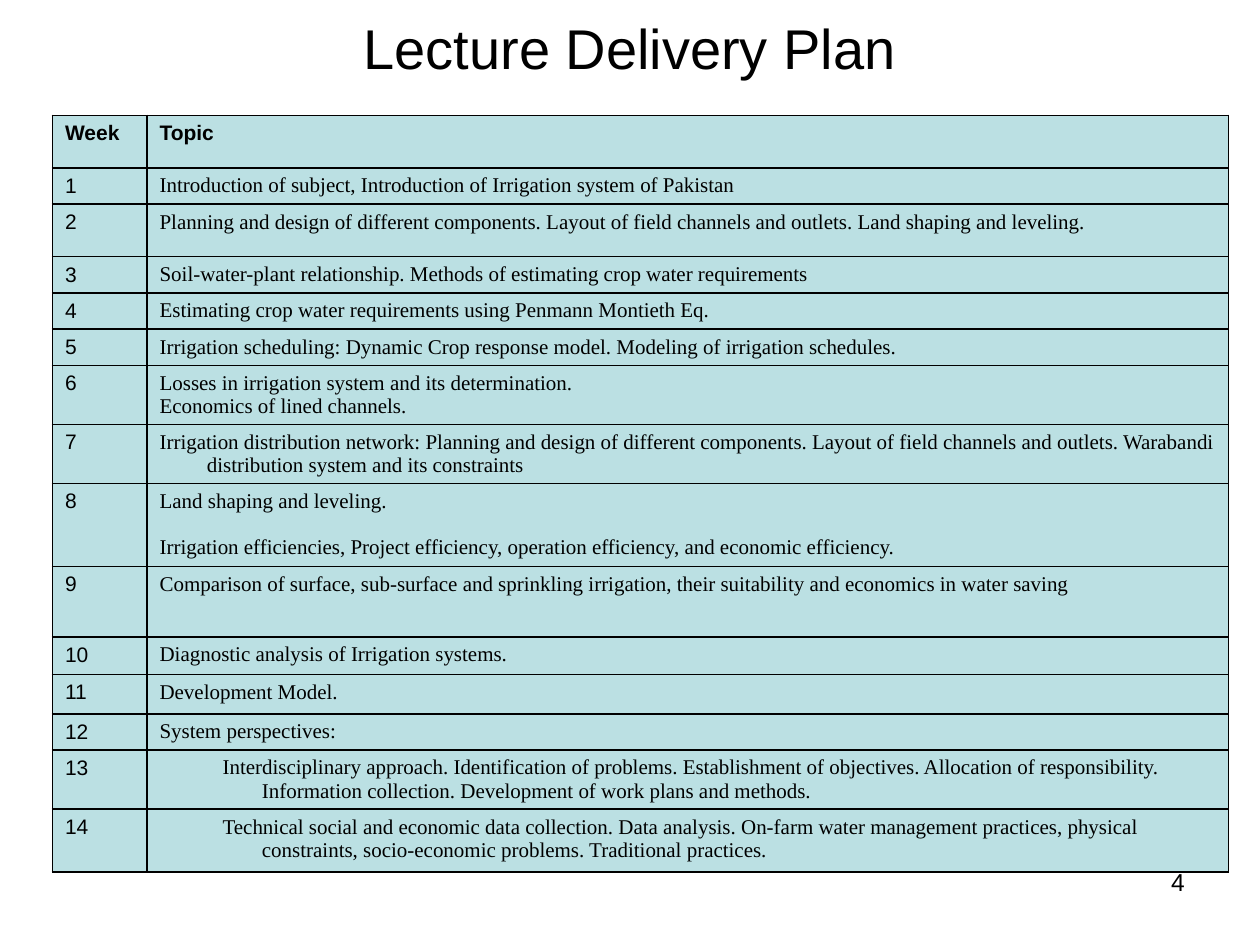
from lxml import etree
from pptx import Presentation
from pptx.dml.color import RGBColor
from pptx.enum import text
from pptx.oxml import ns
from pptx.util import Pt

BLACK = RGBColor(0, 0, 0)
TEAL = RGBColor(0xBB, 0xE0, 0xE3)
SANS, SERIF = "Arial", "Times New Roman"

# Row height and topic paragraphs, one entry a week
WEEKS = [
    (20.7, ["Introduction of subject, Introduction of Irrigation system of Pakistan"]),
    (30, ["Planning and design of different components. Layout of field channels "
          "and outlets. Land shaping and leveling."]),
    (20.7, ["Soil-water-plant relationship. Methods of estimating crop water requirements"]),
    (20.7, ["Estimating crop water requirements using Penmann Montieth Eq."]),
    (20.7, ["Irrigation scheduling: Dynamic Crop response model. "
            "Modeling of irrigation schedules."]),
    (33.8, ["Losses in irrigation system and its determination.",
            "Economics of lined channels."]),
    (33.8, ["Irrigation distribution network: Planning and design of different "
            "components. Layout of field channels and outlets. Warabandi "
            "distribution system and its constraints"]),
    (47.4, ["Land shaping and leveling.",
            "Irrigation efficiencies, Project efficiency, operation efficiency, "
            "and economic efficiency."]),
    (40.3, ["Comparison of surface, sub-surface and sprinkling irrigation, their "
            "suitability and economics in water saving"]),
    (21.5, ["Diagnostic analysis of Irrigation systems."]),
    (22.4, ["Development Model."]),
    (20.7, ["System perspectives:"]),
    (33.8, ["Interdisciplinary approach. Identification of problems. Establishment "
            "of objectives. Allocation of responsibility. Information collection. "
            "Development of work plans and methods."]),
    (36, ["Technical social and economic data collection. Data analysis. On-farm "
          "water management practices, physical constraints, socio-economic "
          "problems. Traditional practices."]),
]
GAPS = {8: 13.2}      # space between the paragraphs of a week
NESTED = (13, 14)     # weeks set one level deeper


def style(para, size, font, bold=False):
    for run in para.runs:
        run.font.size = Pt(size)
        run.font.name = font
        run.font.bold = bold
        run.font.color.rgb = BLACK


def indent(para, left, first):
    props = para._p.get_or_add_pPr()
    props.set("marL", str(Pt(left)))
    props.set("indent", str(Pt(first)))


def label(slide, words, box, size, align, anchor):
    frame = slide.shapes.add_textbox(*map(Pt, box)).text_frame
    frame.word_wrap = True
    frame.vertical_anchor = anchor
    frame.text = words
    para = frame.paragraphs[0]
    para.alignment = align
    style(para, size, SANS)


def border(cell):
    props = cell._tc.get_or_add_tcPr()
    for side in ("lnL", "lnR", "lnT", "lnB"):
        line = etree.SubElement(props, ns.qn(f"a:{side}"), w=str(Pt(1)))
        fill = etree.SubElement(line, ns.qn("a:solidFill"))
        etree.SubElement(fill, ns.qn("a:srgbClr"), val=str(BLACK))


def write(cell, words, font, bold=False):
    """Fill one table cell and return its paragraphs."""
    border(cell)
    cell.margin_bottom = Pt(1)  # keeps the text within the row height
    cell.fill.solid()
    cell.fill.fore_color.rgb = TEAL
    cell.text_frame.text = "\n".join(words)
    paras = cell.text_frame.paragraphs
    for para in paras:
        style(para, 12, font, bold)
    return paras


def plan(slide):
    high = [30] + [h for h, _ in WEEKS]
    grid = slide.shapes.add_table(len(high), 2, Pt(30), Pt(66), Pt(672),
                                  Pt(sum(high))).table
    grid.first_row = grid.horz_banding = False
    for col, wide in zip(grid.columns, (54, 618)):
        col.width = Pt(wide)
    for row, tall in zip(grid.rows, high):
        row.height = Pt(tall)
    for col, head in enumerate(("Week", "Topic")):
        write(grid.cell(0, col), [head], SANS, True)
    for week, (_, topic) in enumerate(WEEKS, 1):
        indent(write(grid.cell(week, 0), [str(week)], SANS)[0], 42, -42)
        paras = write(grid.cell(week, 1), topic, SERIF)
        for para in paras:
            if week in NESTED:
                para.level = 1
                indent(para, 58.5, -22.5)
            else:
                indent(para, 27, -27)
        for para in paras[1:]:
            para.space_before = Pt(GAPS.get(week, 0))


def main():
    deck = Presentation()
    deck.slide_width, deck.slide_height = Pt(720), Pt(540)
    slide = deck.slides.add_slide(deck.slide_layouts[6])
    label(slide, "Lecture Delivery Plan", (36, 0, 648, 54), 32,
          text.PP_ALIGN.CENTER, text.MSO_ANCHOR.MIDDLE)
    plan(slide)
    label(slide, "4", (516, 492, 168, 37.5), 14,
          text.PP_ALIGN.RIGHT, text.MSO_ANCHOR.TOP)
    deck.save("out.pptx")


if __name__ == "__main__":
    main()
